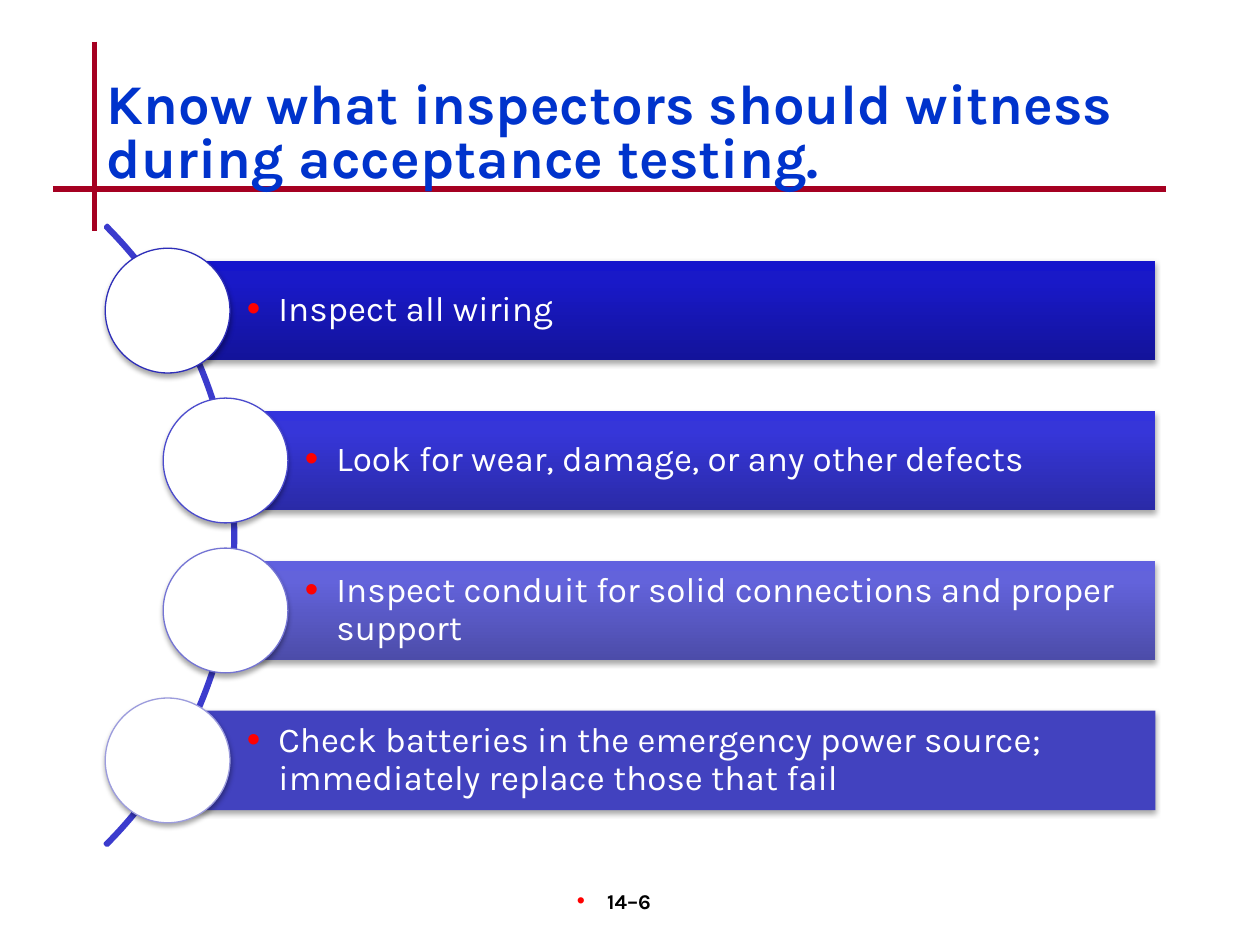
from copy import deepcopy

from pptx import Presentation
from pptx.dml.color import RGBColor
from pptx.enum.shapes import MSO_CONNECTOR, MSO_SHAPE
from pptx.enum.text import MSO_ANCHOR, PP_ALIGN
from pptx.oxml.ns import qn
from pptx.oxml.xmlchemy import OxmlElement
from pptx.util import Inches, Pt

FONT = "Karla"
WHITE = RGBColor(0xFF, 0xFF, 0xFF)
BLACK = RGBColor(0, 0, 0)
RULE_RED = RGBColor(0xA5, 0x00, 0x21)
TITLE_BLUE = RGBColor(0x00, 0x33, 0xCC)
ARC_BLUE = RGBColor(0x3B, 0x3B, 0xCD)
BULLET_RED = "FF0000"

GRADIENT_POSITIONS = (0, 0.8, 1)
BAR_RIGHT, BAR_HEIGHT = 9.17, 0.79
FIRST_BAR_TOP, BAR_PITCH = 2.07, 1.19
CIRCLE_SIZE = 0.99

# Text, left edge of the bar, bar colours from bottom to top, circle outline
STEPS = [
    ("Inspect all wiring", 1.33, ("13139A", "1919C8", "1515CC"), "2E2EB9"),
    ("Look for wear, damage, or any other defects", 1.79,
     ("2A2AA7", "3636D9", "3333DD"), "4B4BCD"),
    ("Inspect conduit for solid connections and proper support", 1.79,
     ("4C4CA9", "6363DB", "6161DF"), "7474D4"),
    ("Check batteries in the emergency power source; "
     "immediately replace those that fail", 1.33, ("4242BF",), "9C9CDD"),
]


def add_child(parent, tag, **attributes):
    child = OxmlElement(tag)
    for key, value in attributes.items():
        child.set(key, str(value))
    parent.append(child)
    return child


def add_bullet(paragraph, margin, hanging):
    properties = paragraph._p.get_or_add_pPr()
    properties.set("marL", str(Inches(margin)))
    properties.set("indent", str(-Inches(hanging)))
    color = add_child(properties, "a:buClr")
    add_child(color, "a:srgbClr", val=BULLET_RED)
    add_child(properties, "a:buSzPct", val=110000)
    add_child(properties, "a:buFont", typeface="Arial")
    add_child(properties, "a:buChar", char="•")


def set_font(paragraph, size, color, bold=False):
    font = paragraph.font
    font.name, font.size, font.bold = FONT, Pt(size), bold
    font.color.rgb = color


def add_rule(slide, x1, y1, x2, y2):
    rule = slide.shapes.add_connector(
        MSO_CONNECTOR.STRAIGHT, Inches(x1), Inches(y1), Inches(x2), Inches(y2))
    rule.line.color.rgb = RULE_RED
    rule.line.width = Pt(3)
    add_child(rule._element.spPr, "a:effectLst")


def add_text(slide, text, left, top, width, height):
    box = slide.shapes.add_textbox(
        Inches(left), Inches(top), Inches(width), Inches(height))
    frame = box.text_frame
    frame.word_wrap = True
    frame.text = text
    return frame


def add_title(slide):
    frame = add_text(slide, "Know what inspectors should witness "
                     "during acceptance testing.", 0.75, 0.55, 8.5, 1)
    frame.vertical_anchor = MSO_ANCHOR.BOTTOM
    title = frame.paragraphs[0]
    title.line_spacing = 0.8
    set_font(title, 32, TITLE_BLUE, bold=True)


def add_page_number(slide):
    number = add_text(slide, "14–6", 3.92, 7, 2.08, 0.5).paragraphs[0]
    number.alignment = PP_ALIGN.CENTER
    add_bullet(number, 0.06, 0.24)
    set_font(number, 12, BLACK, bold=True)


def add_shape(slide, kind, left, top, width, height):
    shape = slide.shapes.add_shape(
        kind, Inches(left), Inches(top), Inches(width), Inches(height))
    shape.shadow.inherit = False
    return shape


def add_soft_shadow(shape):
    effects = shape._element.spPr.find(qn("a:effectLst"))
    shadow = add_child(effects, "a:outerShdw", blurRad=Pt(3.1), dist=Pt(1.8),
                       dir=5400000, rotWithShape=0)
    color = add_child(shadow, "a:srgbClr", val="000000")
    add_child(color, "a:alpha", val=35000)


def fill_bar(bar, colors):
    """Fill with one plain colour, or with three blended from bottom to top."""
    if len(colors) == 1:
        bar.fill.solid()
        bar.fill.fore_color.rgb = RGBColor.from_string(colors[0])
        return
    bar.fill.gradient()
    bar.fill.gradient_angle = 90
    stop_list = bar._element.spPr.find(".//" + qn("a:gsLst"))
    stop_list.append(deepcopy(stop_list[-1]))
    for stop, position, color in zip(
            bar.fill.gradient_stops, GRADIENT_POSITIONS, colors):
        stop.position = position
        stop.color.rgb = RGBColor.from_string(color)


def add_arc(slide):
    arc = add_shape(slide, MSO_SHAPE.BLOCK_ARC, -5.09, 0.77, 6.96, 6.96)
    for index, value in enumerate((189, 27, 0.003)):
        arc.adjustments[index] = value
    arc.fill.background()
    arc.line.color.rgb = ARC_BLUE
    arc.line.width = Pt(2)


def add_bar(slide, text, left, top, colors):
    bar = add_shape(slide, MSO_SHAPE.RECTANGLE, left, top,
                    BAR_RIGHT - left, BAR_HEIGHT)
    fill_bar(bar, colors)
    bar.line.fill.background()
    add_soft_shadow(bar)

    frame = bar.text_frame
    frame.word_wrap = True
    frame.vertical_anchor = MSO_ANCHOR.MIDDLE
    frame.margin_left = Inches(0.63)
    frame.margin_top = frame.margin_right = frame.margin_bottom = Inches(0.06)
    frame.text = text
    step = frame.paragraphs[0]
    step.alignment = PP_ALIGN.LEFT
    step.line_spacing = 0.9
    add_bullet(step, 0.25, 0.25)
    set_font(step, 20, WHITE)


def add_circle(slide, center_x, center_y, outline):
    circle = add_shape(slide, MSO_SHAPE.OVAL, center_x - CIRCLE_SIZE / 2,
                       center_y - CIRCLE_SIZE / 2, CIRCLE_SIZE, CIRCLE_SIZE)
    circle.fill.solid()
    circle.fill.fore_color.rgb = WHITE
    circle.line.color.rgb = RGBColor.from_string(outline)
    circle.line.width = Pt(0.75)
    add_soft_shadow(circle)


def main():
    prs = Presentation()
    prs.slide_width, prs.slide_height = Inches(10), Inches(7.5)
    slide = prs.slides.add_slide(prs.slide_layouts[6])

    add_rule(slide, 0.75, 0.33, 0.75, 1.83)
    add_rule(slide, 0.42, 1.5, 9.25, 1.5)
    add_page_number(slide)
    add_title(slide)
    add_arc(slide)
    for row, (text, left, colors, outline) in enumerate(STEPS):
        top = FIRST_BAR_TOP + row * BAR_PITCH
        add_bar(slide, text, left, top, colors)
        add_circle(slide, left, top + BAR_HEIGHT / 2, outline)

    prs.save("out.pptx")


if __name__ == "__main__":
    main()
